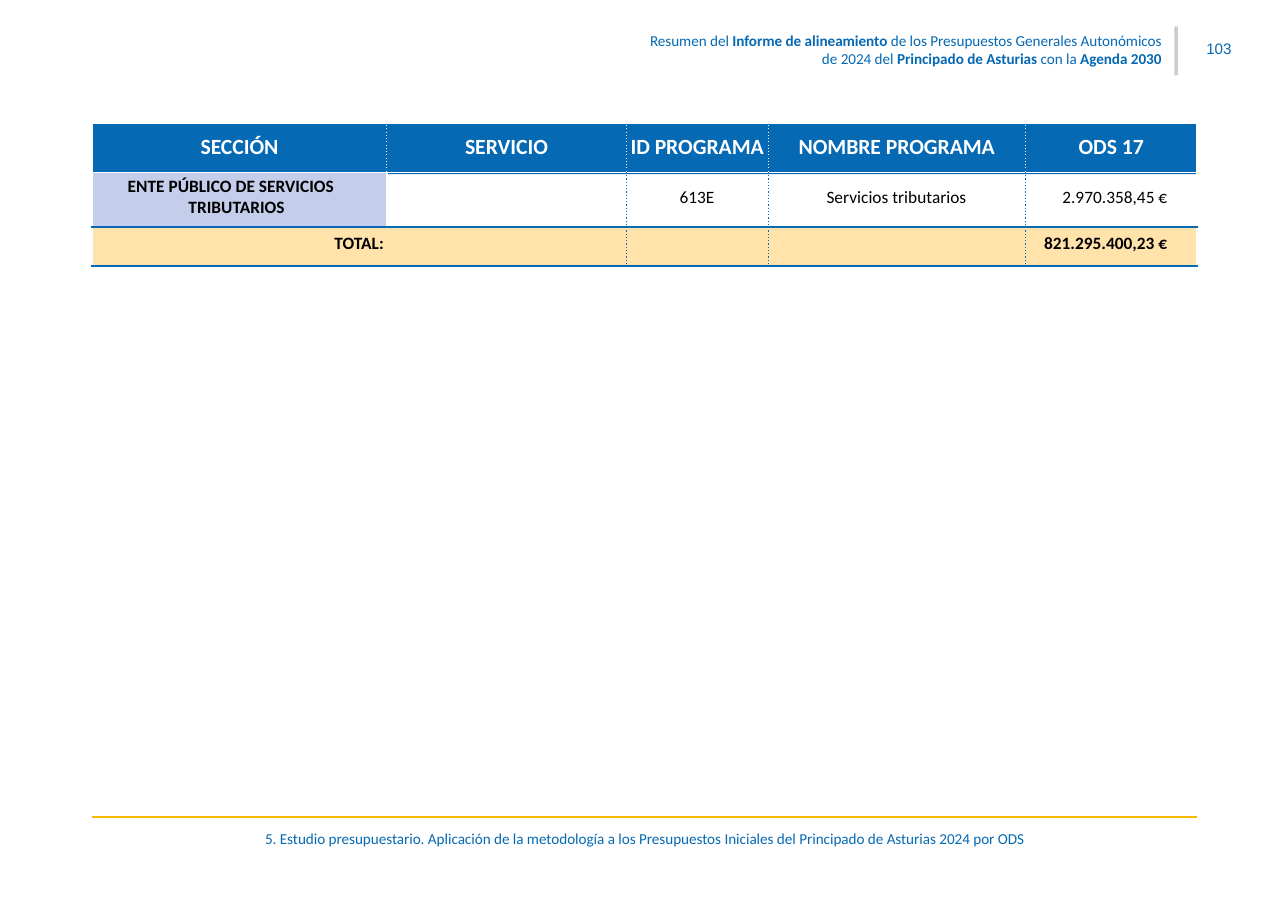
from lxml import etree
from pptx import Presentation
from pptx import util as u
from pptx.dml import color
from pptx.enum import shapes, text
from pptx.oxml import ns

COLORS = {
    "blue": "0669B3", "yellow": "FBB800", "lilac": "C4CEEB",
    "cream": "FFE3AA", "white": "FFFFFF", "black": "000000",
}
LEFT, WIDTH = 1.5, 18.0
TABLE_TOP = 2.0
COLUMNS = [4.8, 3.9, 2.31, 4.19, 2.8]
ROWS = [0.81, 0.89, 0.64]
HEADINGS = ["SECCIÓN", "SERVICIO", "ID PROGRAMA", "NOMBRE PROGRAMA", "ODS 17"]
PROGRAM = ["ENTE PÚBLICO DE SERVICIOS TRIBUTARIOS", "", "613E",
           "Servicios tributarios", "2.970.358,45 €"]
TOTALS = ["TOTAL:", "", "", "", "821.295.400,23 €"]
HEADER = [
    ("Resumen del ", False), ("Informe de alineamiento ", True),
    ("de los Presupuestos Generales Autonómicos de 2024 del ", False),
    ("Principado de Asturias ", True), ("con la ", False), ("Agenda 2030", True),
]
FOOTER = ("5. Estudio presupuestario. Aplicación de la metodología a los "
          "Presupuestos Iniciales del Principado de Asturias 2024 por ODS")
ALIGN = text.PP_ALIGN
HEADING_STYLE = {"fill": "blue", "tint": "white", "margin": 0.18, "before": 4.8,
                 "size": 10, "bold": True}
PROGRAM_STYLE = {"fill": None, "tint": "black", "margin": 0.23, "before": 6.5,
                 "size": 8, "bold": False}
TOTAL_STYLE = {"fill": "cream", "tint": "black", "margin": 0.1, "before": 3.1,
               "size": 8, "bold": True}
SECTION_STYLE = {"fill": "lilac", "tint": "black", "margin": 0.05, "before": 1.1,
                 "size": 8, "bold": True}


def rgb(name):
    return color.RGBColor.from_string(COLORS[name])


def set_all(target, values):
    for name, value in values.items():
        setattr(target, name, value)


def write(paragraph, runs, size=7, tint="blue", align=ALIGN.LEFT, before=1, font="Calibri"):
    set_all(paragraph, {"alignment": align, "space_before": u.Pt(before), "line_spacing": 1.0})
    for words, bold in runs:
        run = paragraph.add_run()
        run.text = words
        set_all(run.font, {"name": font, "size": u.Pt(size), "bold": bold})
        run.font.color.rgb = rgb(tint)


def fill_text(shape, box, runs, **options):
    set_all(shape, dict(zip(("left", "top", "width", "height"), map(u.Cm, box))))
    frame = shape.text_frame
    set_all(frame, {
        "margin_left": 0, "margin_right": 0, "margin_bottom": 0,
        "margin_top": u.Cm(0.03), "word_wrap": True,
        "auto_size": text.MSO_AUTO_SIZE.SHAPE_TO_FIT_TEXT,
        "vertical_anchor": text.MSO_ANCHOR.TOP,
    })
    write(frame.paragraphs[0], runs, **options)


def add_text(slide, box, words, **options):
    shape = slide.shapes.add_textbox(*map(u.Cm, box))
    fill_text(shape, box, [(words, False)], **options)


def add_block(slide, box, tint, opacity=100):
    shape = slide.shapes.add_shape(shapes.MSO_SHAPE.RECTANGLE, *map(u.Cm, box))
    shape.shadow.inherit = False
    shape.line.fill.background()
    shape.fill.solid()
    shape.fill.fore_color.rgb = rgb(tint)
    if opacity < 100:
        fill_color = next(shape.element.iter(ns.qn("a:srgbClr")))
        etree.SubElement(fill_color, ns.qn("a:alpha"), val=str(opacity * 1000))


def add_rule(slide, top):
    line = slide.shapes.add_connector(
        shapes.MSO_CONNECTOR.STRAIGHT,
        u.Cm(LEFT), u.Cm(top), u.Cm(LEFT + WIDTH), u.Cm(top))
    line.line.color.rgb = rgb("yellow")
    line.line.width = u.Pt(1)
    etree.SubElement(line.element.spPr, ns.qn("a:effectLst"))


def add_border(cell, side, tint, points, dash="solid"):
    properties = cell._tc.get_or_add_tcPr()
    line = etree.SubElement(properties, ns.qn("a:ln" + side), w=str(u.Pt(points)))
    solid = etree.SubElement(line, ns.qn("a:solidFill"))
    etree.SubElement(solid, ns.qn("a:srgbClr"), val=COLORS[tint])
    etree.SubElement(line, ns.qn("a:prstDash"), val=dash)


def add_borders(cell, row, column):
    upright = "white" if row == 0 else "blue"
    first = 2 if row == 1 else 1
    if column >= first:
        add_border(cell, "L", upright, 0.5, "sysDot")
    if first - 1 <= column < len(COLUMNS) - 1:
        add_border(cell, "R", upright, 0.5, "sysDot")
    if row > 0:
        add_border(cell, "T", *(("white", 0.5) if row == 1 else ("blue", 1)))
    add_border(cell, "B", *(("white", 0.5) if row == 0 else ("blue", 1)))


def fill_cell(cell, words, align, fill, margin, size, bold, **options):
    set_all(cell, {
        "margin_left": 0, "margin_right": u.Cm(0.48 if align == ALIGN.RIGHT else 0),
        "margin_top": u.Cm(margin), "margin_bottom": 0,
    })
    if fill:
        cell.fill.solid()
        cell.fill.fore_color.rgb = rgb(fill)
    else:
        cell.fill.background()
    paragraph = cell.text_frame.paragraphs[0]
    if words:
        write(paragraph, [(words, bold)], size=size, align=align, **options)
    else:
        etree.SubElement(paragraph._p, ns.qn("a:endParaRPr"), sz=str(size * 100))


def hang(paragraph, left, first):
    properties = paragraph._p.get_or_add_pPr()
    properties.set("marL", str(u.Cm(left)))
    properties.set("indent", str(u.Cm(first)))


def add_budget_table(slide):
    frame = slide.shapes.add_table(
        len(ROWS), len(COLUMNS), u.Cm(LEFT), u.Cm(TABLE_TOP), u.Cm(WIDTH), u.Cm(sum(ROWS)))
    table = frame.table
    table.horz_banding = False
    for column, width in zip(table.columns, COLUMNS):
        column.width = u.Cm(width)
    for row, height in zip(table.rows, ROWS):
        row.height = u.Cm(height)
    table.cell(2, 0).merge(table.cell(2, 1))

    content = [(HEADINGS, HEADING_STYLE), (PROGRAM, PROGRAM_STYLE), (TOTALS, TOTAL_STYLE)]
    for row, (values, row_style) in enumerate(content):
        for column, words in enumerate(values):
            cell = table.cell(row, column)
            is_section = (row, column) == (1, 0)
            is_amount = row > 0 and column == len(COLUMNS) - 1
            align = ALIGN.LEFT if is_section else ALIGN.RIGHT if is_amount else ALIGN.CENTER
            add_borders(cell, row, column)
            fill_cell(cell, words, align, **(SECTION_STYLE if is_section else row_style))
    hang(table.cell(1, 0).text_frame.paragraphs[0], 1.57, -0.99)


def main():
    presentation = Presentation()
    set_all(presentation, {"slide_width": u.Cm(20.98), "slide_height": u.Cm(14.81)})
    slide = presentation.slides.add_slide(presentation.slide_layouts[5])
    add_rule(slide, 13.31)
    fill_text(slide.shapes.title, (10.39, 0.48, 8.53, 0.64), HEADER, align=ALIGN.RIGHT)
    add_block(slide, (19.13, 0.43, 0.06, 0.8), "black", 20)
    add_text(slide, (19.65, 0.61, 0.43, 0.36), "103", font="Arial")
    add_block(slide, (LEFT, TABLE_TOP, WIDTH, 0.84), "blue")
    add_budget_table(slide)
    add_text(slide, (LEFT, 13.49, WIDTH, 0.3), FOOTER, align=ALIGN.CENTER, before=0.5)
    presentation.save("out.pptx")


if __name__ == "__main__":
    main()
